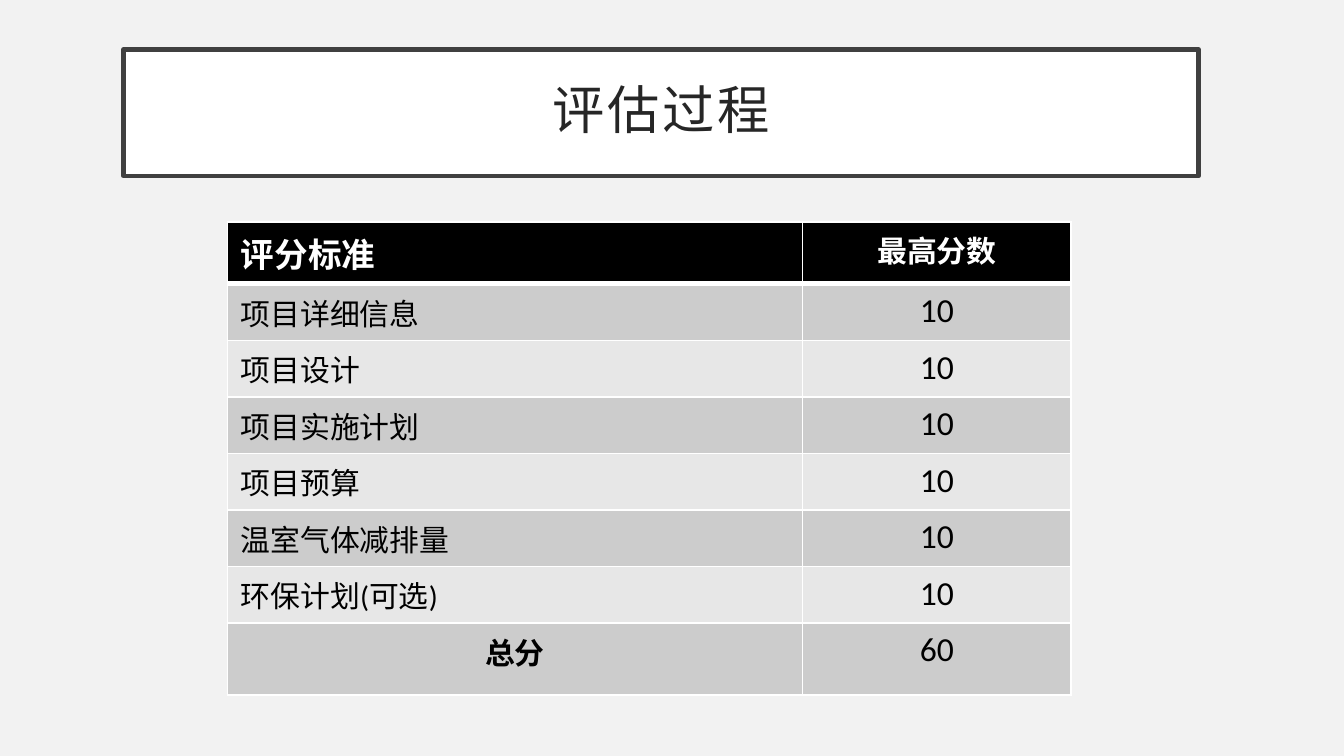
from lxml import etree
from pptx import Presentation
from pptx.dml.color import RGBColor
from pptx.enum.shapes import MSO_SHAPE
from pptx.enum.text import MSO_ANCHOR, PP_ALIGN
from pptx.oxml.ns import qn
from pptx.util import Pt

WHITE = RGBColor(0xFF, 0xFF, 0xFF)
BLACK = RGBColor(0, 0, 0)
BACKGROUND = RGBColor(0xF2, 0xF2, 0xF2)
FRAME = RGBColor(0x40, 0x40, 0x40)
TITLE_TEXT = RGBColor(0x26, 0x26, 0x26)
DARK_BAND = RGBColor(0xCC, 0xCC, 0xCC)
LIGHT_BAND = RGBColor(0xE7, 0xE7, 0xE7)
FONT = "Calibri"


def add_border(cell, side, width):
    line = etree.SubElement(cell._tc.get_or_add_tcPr(), qn(f"a:{side}"), w=str(Pt(width)))
    fill = etree.SubElement(line, qn("a:solidFill"))
    etree.SubElement(fill, qn("a:srgbClr"), val=str(WHITE))


def style_paragraph(paragraph, size, color, bold, align):
    paragraph.alignment = align
    paragraph.font.name = FONT
    paragraph.font.size = Pt(size)
    paragraph.font.bold = bold
    paragraph.font.color.rgb = color


prs = Presentation()
prs.slide_width, prs.slide_height = Pt(720), Pt(405)
slide = prs.slides.add_slide(prs.slide_layouts[6])
slide.background.fill.solid()
slide.background.fill.fore_color.rgb = BACKGROUND

# Framed title
title = slide.shapes.add_shape(MSO_SHAPE.RECTANGLE, Pt(66.2), Pt(26.6), Pt(576), Pt(67.7))
title.shadow.inherit = False
title.fill.solid()
title.fill.fore_color.rgb = WHITE
title.line.color.rgb = FRAME
title.line.width = Pt(2.5)
frame = title.text_frame
frame.word_wrap = True
frame.vertical_anchor = MSO_ANCHOR.MIDDLE
frame.margin_left = frame.margin_right = frame.margin_top = frame.margin_bottom = Pt(14.4)
heading = frame.paragraphs[0]
heading.line_spacing = 0.9
style_paragraph(heading, 28, TITLE_TEXT, False, PP_ALIGN.CENTER)
heading_run = heading.add_run()
heading_run.text = "评估过程"
heading_run.font._element.set("spc", "150")  # letter spacing of 1.5 pt

# Scoring table
criteria = ["项目详细信息", "项目设计", "项目实施计划", "项目预算", "温室气体减排量", "环保计划(可选)"]
scores = [("评分标准", "最高分数"), *((name, "10") for name in criteria), ("总分", "60")]
last = len(scores) - 1
table = slide.shapes.add_table(len(scores), 2, Pt(121.9), Pt(118.8), Pt(452), Pt(239)).table
table.columns[0].width, table.columns[1].width = Pt(308), Pt(144)

for row, texts in enumerate(scores):
    header, total = row == 0, row == last
    table.rows[row].height = Pt(23 if header else 38.5 if total else 28.8)
    band = BLACK if header else DARK_BAND if row % 2 else LIGHT_BAND
    for column, text in enumerate(texts):
        cell = table.cell(row, column)
        for side in ("lnL", "lnR", "lnT", "lnB"):
            thick = (header and side == "lnB") or (row == 1 and side == "lnT")
            add_border(cell, side, 3 if thick else 1)
        cell.fill.solid()
        cell.fill.fore_color.rgb = band
        cell.text = text
        style_paragraph(
            cell.text_frame.paragraphs[0],
            size=18 if header != (column == 1) else 16,
            color=WHITE if header else BLACK,
            bold=header or (total and column == 0),
            align=PP_ALIGN.CENTER if column == 1 or total else PP_ALIGN.LEFT,
        )

prs.save("out.pptx")
